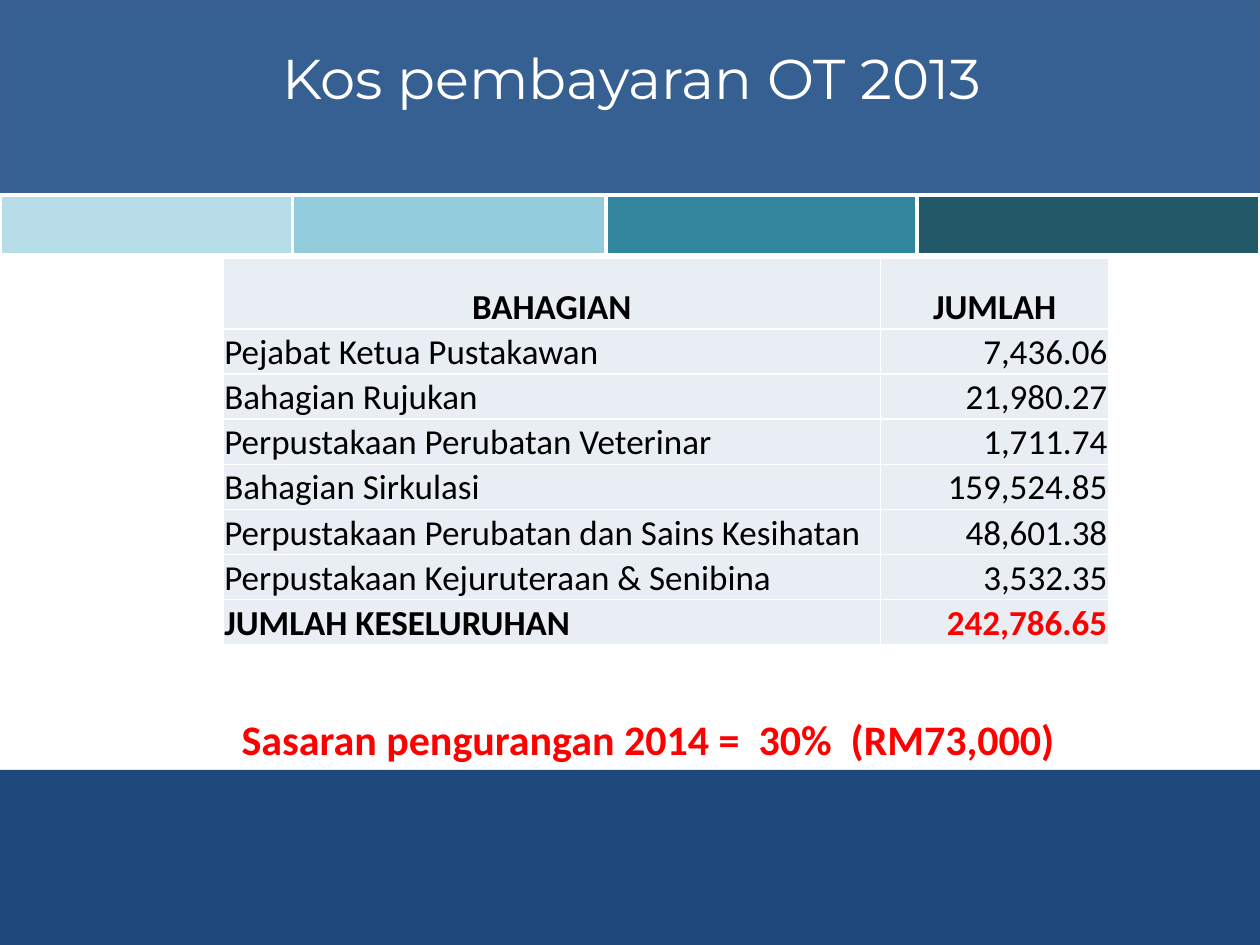
import dataclasses

import lxml.etree
import pptx
import pptx.dml.color
import pptx.enum.shapes
import pptx.enum.text
import pptx.oxml.ns
import pptx.util

Inches = pptx.util.Inches
Pt = pptx.util.Pt
ALIGN = pptx.enum.text.PP_ALIGN
ANCHOR = pptx.enum.text.MSO_ANCHOR


@dataclasses.dataclass(frozen=True)
class Theme:
    header: str = "376092"
    header_line: str = "3A5F8C"
    footer: str = "1F497D"
    strip: tuple = ("B7DEE8", "93CDDD", "31859C", "215968")
    cell: str = "E9EDF4"
    white: str = "FFFFFF"
    text: str = "000000"
    accent: str = "FF0000"
    title_font: str = "Montserrat"
    body_font: str = "Calibri"
    title_size: int = 32
    note_size: int = 24
    table_size: int = 20


THEME = Theme()

ROWS = [
    ("BAHAGIAN", "JUMLAH"),
    ("Pejabat Ketua Pustakawan", "7,436.06"),
    ("Bahagian Rujukan", "21,980.27"),
    ("Perpustakaan Perubatan Veterinar", "1,711.74"),
    ("Bahagian Sirkulasi", "159,524.85"),
    ("Perpustakaan Perubatan dan Sains Kesihatan", "48,601.38"),
    ("Perpustakaan Kejuruteraan & Senibina", "3,532.35"),
    ("JUMLAH KESELURUHAN", "242,786.65"),
]


def rgb(value):
    return pptx.dml.color.RGBColor.from_string(value)


def format_text(p, font, size, color, bold=False, align=ALIGN.CENTER):
    p.alignment = align
    for r in p.runs:
        r.font.name = font
        r.font.size = Pt(size)
        r.font.bold = bold
        r.font.color.rgb = rgb(color)


def add_band(slide, left, top, width, height, fill, line=None):
    sp = slide.shapes.add_shape(
        pptx.enum.shapes.MSO_SHAPE.RECTANGLE,
        Inches(left), Inches(top), Inches(width), Inches(height))
    sp.shadow.inherit = False
    sp.fill.solid()
    sp.fill.fore_color.rgb = rgb(fill)
    if line:
        sp.line.color.rgb = rgb(line)
        sp.line.width = Pt(2)
    else:
        sp.line.fill.background()


def add_strip(slide, left, top, width, height):
    # Each colour runs from its own edge to the next one
    edges = [left + width * share for share in (0, 0.232, 0.481, 0.728, 1)]
    for start, end, color in zip(edges, edges[1:], THEME.strip):
        add_band(slide, start, top, end - start, height, color, THEME.white)


def add_title(slide, left, top, width, height):
    sp = slide.shapes.title
    sp.left, sp.top = Inches(left), Inches(top)
    sp.width, sp.height = Inches(width), Inches(height)
    tf = sp.text_frame
    tf.text = "Kos pembayaran OT 2013"
    tf.vertical_anchor = ANCHOR.MIDDLE
    format_text(tf.paragraphs[0], THEME.title_font, THEME.title_size, THEME.white)
    # Bring the title in front of the header band
    slide.shapes._spTree.append(sp._element)


def add_borders(cell, color, width):
    tc_pr = cell._tc.get_or_add_tcPr()
    for side in ("a:lnL", "a:lnR", "a:lnT", "a:lnB"):
        ln = lxml.etree.SubElement(tc_pr, pptx.oxml.ns.qn(side), w=str(Pt(width)))
        fill = lxml.etree.SubElement(ln, pptx.oxml.ns.qn("a:solidFill"))
        lxml.etree.SubElement(fill, pptx.oxml.ns.qn("a:srgbClr"), val=color)


def fill_cell(cell, text, color, bold, align):
    add_borders(cell, THEME.white, 1)
    cell.fill.solid()
    cell.fill.fore_color.rgb = rgb(THEME.cell)
    cell.margin_left = cell.margin_right = cell.margin_top = Inches(0.01)
    cell.margin_bottom = 0
    cell.vertical_anchor = ANCHOR.BOTTOM
    cell.text = text
    format_text(cell.text_frame.paragraphs[0], THEME.body_font,
                THEME.table_size, color, bold, align)


def add_cost_table(slide, left, top, width, height):
    table = slide.shapes.add_table(
        len(ROWS), 2, Inches(left), Inches(top), Inches(width), Inches(height)).table
    table.first_row = table.horz_banding = False
    amount_width = 1.81
    table.columns[0].width = Inches(width - amount_width)
    table.columns[1].width = Inches(amount_width)

    # The heading row is taller, the others share what is left
    head_height = 0.56
    row_height = (height - head_height) / (len(ROWS) - 1)
    last = len(ROWS) - 1
    for i, values in enumerate(ROWS):
        table.rows[i].height = Inches(row_height if i else head_height)
        for j, text in enumerate(values):
            align = (ALIGN.LEFT, ALIGN.RIGHT)[j] if i else ALIGN.CENTER
            color = THEME.accent if (i, j) == (last, 1) else THEME.text
            fill_cell(table.cell(i, j), text, color, i in (0, last), align)


def add_target(slide, left, top, width, height):
    tf = slide.shapes.add_textbox(
        Inches(left), Inches(top), Inches(width), Inches(height)).text_frame
    tf.word_wrap = True
    tf.text = "Sasaran pengurangan 2014 =  30%  (RM73,000)"
    tf.vertical_anchor = ANCHOR.BOTTOM
    format_text(tf.paragraphs[0], THEME.body_font, THEME.note_size, THEME.accent, True)


def main():
    prs = pptx.Presentation()
    prs.slide_width, prs.slide_height = Inches(10), Inches(7.5)
    slide = prs.slides.add_slide(prs.slide_layouts[5])

    # Background bands
    add_band(slide, -0.02, 6.11, 10.04, 1.39, THEME.footer)
    add_band(slide, 0, 0, 10, 1.55, THEME.header, THEME.header_line)
    add_strip(slide, 0, 1.55, 10, 0.47)

    # Content
    add_target(slide, 0.36, 5.61, 9.57, 0.5)
    add_cost_table(slide, 1.77, 2.05, 7.03, 3.07)
    add_title(slide, 0.23, 0.29, 9.57, 0.64)
    prs.save("out.pptx")


if __name__ == "__main__":
    main()
